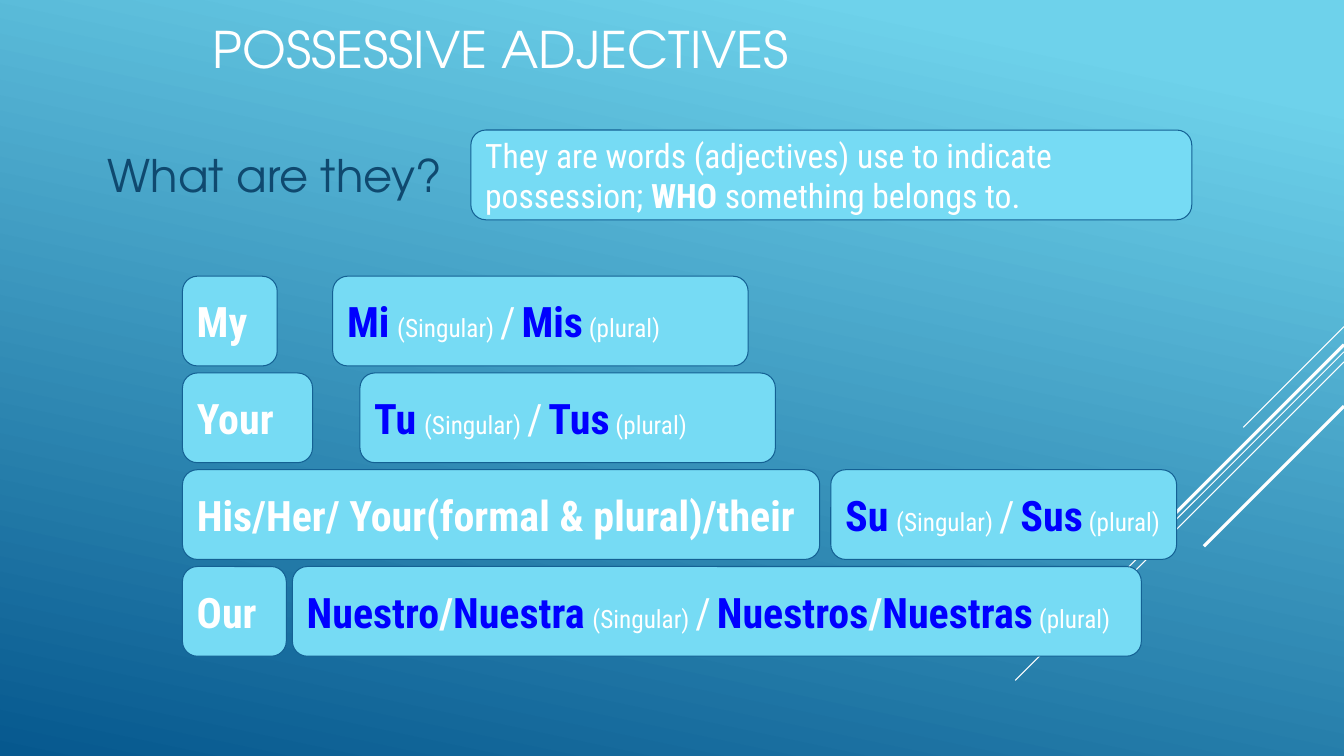
from dataclasses import dataclass

from lxml import etree
from pptx import Presentation
from pptx.dml.color import RGBColor
from pptx.enum.shapes import MSO_CONNECTOR, MSO_SHAPE
from pptx.enum.text import MSO_ANCHOR, MSO_AUTO_SIZE, PP_ALIGN
from pptx.oxml.ns import qn
from pptx.util import Inches, Pt

STRAIGHT = MSO_CONNECTOR.STRAIGHT
ROUNDED = MSO_SHAPE.FLOWCHART_ALTERNATE_PROCESS
TOP, MIDDLE = MSO_ANCHOR.TOP, MSO_ANCHOR.MIDDLE
LEFT = PP_ALIGN.LEFT
NO_AUTOFIT = MSO_AUTO_SIZE.NONE


@dataclass(frozen=True)
class Theme:
    """Hold the colours, fonts and type sizes of the page."""
    sky: str = "6ED2EB"
    deep: str = "06588E"
    box: str = "76DBF4"
    outline: str = "146194"
    white: str = "FFFFFF"
    navy: str = "0F496F"
    spanish: str = "0000FF"
    heading_font: str = "TeX Gyre Adventor"
    text_font: str = "Roboto Condensed"
    title_size: int = 36
    question_size: int = 32
    word_size: int = 30
    text_size: int = 24
    note_size: int = 18


THEME = Theme()
PAGE_WIDTH, PAGE_HEIGHT = 13.33, 7.5
BOX_HEIGHT = 0.89
ROW_LEFT, ROW_TOP, ROW_STEP = 1.81, 2.74, 0.96

RAYS = [
    (3.24, 1.0, 0.75),
    (3.49, 3.26, 0.75),
    (3.59, 2.07, 0.75),
    (3.42, 1.91, 2.25),
    (4.03, 1.39, 2.25),
]

ROWS = [
    ("My", 0.94, 3.3, 4.12, ["Mi"], ["Mis"]),
    ("Your", 1.29, 3.57, 4.12, ["Tu"], ["Tus"]),
    ("His/Her/ Your(formal & plural)/their", 6.32, 8.24, 3.43, ["Su"], ["Sus"]),
    ("Our", 1.03, 2.9, 8.42, ["Nuestro", "Nuestra"], ["Nuestros", "Nuestras"]),
]


def color(code):
    """Turn a hex code into a colour."""
    return RGBColor.from_string(code)


def add_span(para, text, size, font=THEME.text_font, shade=THEME.white, bold=False):
    """Add one formatted run to a paragraph."""
    span = para.add_run()
    span.text = text
    span.font.name = font
    span.font.size = Pt(size)
    span.font.bold = bold
    span.font.color.rgb = color(shade)


def prepare_frame(shape, anchor):
    """Set the insets and wrapping of a shape and return its first paragraph."""
    frame = shape.text_frame
    frame.word_wrap = True
    frame.auto_size = NO_AUTOFIT
    frame.vertical_anchor = anchor
    frame.margin_left = frame.margin_right = Inches(0.1)
    frame.margin_top = frame.margin_bottom = Inches(0.1)
    para = frame.paragraphs[0]
    para.alignment = LEFT
    para.space_before = Pt(0)
    return para


def paint_background(page):
    """Fill the page with the slanted blue gradient."""
    fill = page.background.fill
    fill.gradient()
    fill.gradient_angle = 258
    stops = [(0.1, THEME.sky), (1.0, THEME.deep)]
    for stop, (position, shade) in zip(fill.gradient_stops, stops):
        stop.position = position
        stop.color.rgb = color(shade)


def add_ray(page, top, reach, weight):
    """Draw a diagonal line down and left from the right edge."""
    ray = page.shapes.add_connector(
        STRAIGHT, Inches(PAGE_WIDTH), Inches(top),
        Inches(PAGE_WIDTH - reach), Inches(top + reach))
    ray.line.color.rgb = color(THEME.white)
    ray.line.width = Pt(weight)
    etree.SubElement(ray._element.spPr, qn("a:effectLst"))


def fill_placeholder(holder, bounds, text, size, shade):
    """Move a placeholder and write its unbulleted heading."""
    holder.left, holder.top, holder.width, holder.height = map(Inches, bounds)
    para = prepare_frame(holder, TOP)
    properties = para._p.get_or_add_pPr()
    properties.set("marL", "0")
    properties.set("indent", "0")
    etree.SubElement(properties, qn("a:buNone"))
    add_span(para, text, size, THEME.heading_font, shade)


def add_box(page, left, top, width):
    """Add a rounded box and return its paragraph."""
    box = page.shapes.add_shape(
        ROUNDED, Inches(left), Inches(top), Inches(width), Inches(BOX_HEIGHT))
    box.shadow.inherit = False
    box.fill.solid()
    box.fill.fore_color.rgb = color(THEME.box)
    box.line.color.rgb = color(THEME.outline)
    box.line.width = Pt(0.75)
    return prepare_frame(box, MIDDLE)


def add_words(para, words):
    """Write Spanish words in blue, parted by white slashes."""
    for index, word in enumerate(words):
        if index:
            add_span(para, "/", THEME.word_size, bold=True)
        add_span(para, word, THEME.word_size, shade=THEME.spanish, bold=True)


def add_row(page, top, english, english_width, left, width, singular, plural):
    """Add an English adjective and its Spanish forms."""
    para = add_box(page, ROW_LEFT, top, english_width)
    add_span(para, english, THEME.word_size, bold=True)
    para = add_box(page, left, top, width)
    add_words(para, singular)
    add_span(para, " ", THEME.text_size)
    add_span(para, "(Singular) ", THEME.note_size)
    add_span(para, "/", THEME.word_size)
    add_span(para, " ", THEME.note_size)
    add_words(para, plural)
    add_span(para, " (plural)", THEME.note_size)


def main():
    """Build the page and save the deck."""
    deck = Presentation()
    deck.slide_width, deck.slide_height = Inches(PAGE_WIDTH), Inches(PAGE_HEIGHT)
    page = deck.slides.add_slide(deck.slide_layouts[1])
    paint_background(page)
    fill_placeholder(page.shapes.title, (2.01, 0.08, 9.32, 0.63),
                     "POSSESSIVE ADJECTIVES", THEME.title_size, THEME.white)
    fill_placeholder(page.placeholders[1], (0.97, 1.37, 9.32, 3.74),
                     "What are they?", THEME.question_size, THEME.navy)
    for ray in RAYS:
        add_ray(page, *ray)
    para = add_box(page, 4.67, 1.29, 7.15)
    add_span(para, "They are words (adjectives) use to indicate possession; ",
             THEME.text_size)
    add_span(para, "WHO", THEME.text_size, bold=True)
    add_span(para, " something belongs to.", THEME.text_size)
    for index, row in enumerate(ROWS):
        add_row(page, ROW_TOP + index * ROW_STEP, *row)
    deck.save("out.pptx")


if __name__ == "__main__":
    main()
